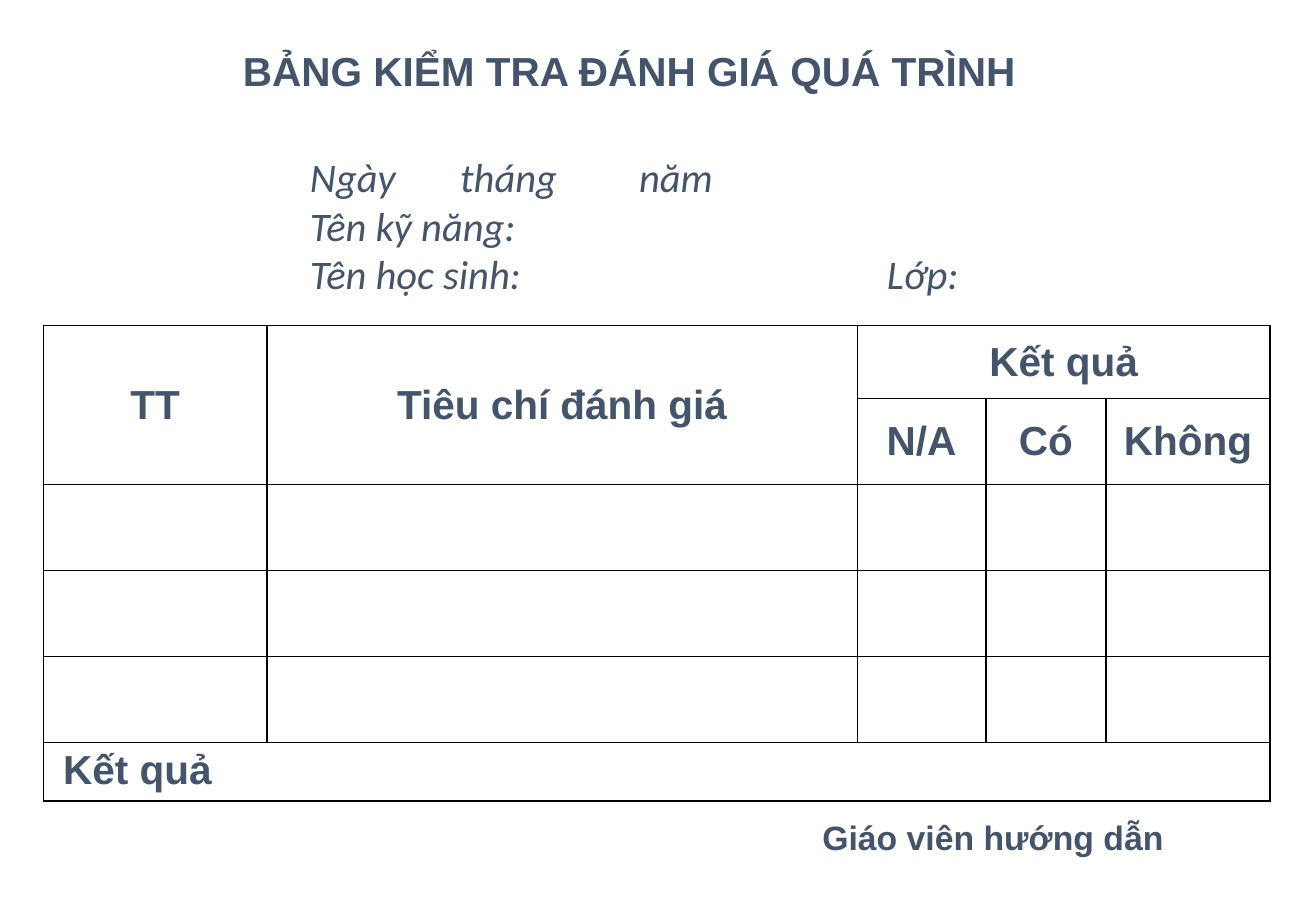
"""Build a one-slide process assessment form with a results table."""
from lxml.etree import SubElement
from pptx import Presentation
from pptx.dml.color import RGBColor
from pptx.enum.text import MSO_ANCHOR as Anchor, PP_ALIGN as Align
from pptx.oxml.ns import qn
from pptx.util import Cm, Pt

SLATE = RGBColor(0x44, 0x54, 0x6A)
BLACK = RGBColor(0x00, 0x00, 0x00)

HEADING = {"name": "Arial", "size": Pt(24), "bold": True}
DETAIL = {"name": "Calibri", "size": Pt(24), "italic": True}
SIGNATURE = {"name": "Arial", "size": Pt(20), "bold": True}


def write(paragraph, text, look, align=Align.LEFT):
    paragraph.alignment = align
    run = paragraph.add_run()
    run.text = text
    for attribute, value in look.items():
        setattr(run.font, attribute, value)
    run.font.color.rgb = SLATE


def add_frame(left, top, width, height, wrap, anchor):
    box = slide.shapes.add_textbox(Cm(left), Cm(top), Cm(width), Cm(height))
    frame = box.text_frame
    frame.word_wrap = wrap
    frame.vertical_anchor = anchor
    return frame


prs = Presentation()
prs.slide_width, prs.slide_height = Cm(27.51), Cm(19.05)
slide = prs.slides.add_slide(prs.slide_layouts[6])

title = add_frame(4.83, 0.84, 16.81, 1.28, False, Anchor.TOP)
write(title.paragraphs[0], "BẢNG KIỂM TRA ĐÁNH GIÁ QUÁ TRÌNH", HEADING)

details = add_frame(6.23, 3.06, 16, 3.3, True, Anchor.MIDDLE)
detail_lines = [
    ("Ngày\ttháng\tnăm", [3.14, 6.88]),
    ("Tên kỹ năng:", []),
    ("Tên học sinh:\tLớp:", [12.06]),
]
for index, (text, stops) in enumerate(detail_lines):
    line = details.add_paragraph() if index else details.paragraphs[0]
    if stops:
        tab_list = SubElement(line._p.get_or_add_pPr(), qn("a:tabLst"))
        for stop in stops:
            SubElement(tab_list, qn("a:tab"), pos=str(Cm(stop)), algn="l")
    write(line, text, DETAIL)

column_widths = [4.67, 12.34, 2.69, 2.51, 3.43]
row_heights = [1.52] + [1.8] * 4 + [1.2]
criteria = slide.shapes.add_table(
    len(row_heights), len(column_widths), Cm(0.91), Cm(6.81),
    Cm(sum(column_widths)), Cm(sum(row_heights))).table
criteria.first_row = criteria.horz_banding = False
for column, width in zip(criteria.columns, column_widths):
    column.width = Cm(width)
for row, height in zip(criteria.rows, row_heights):
    row.height = Cm(height)

for cell in criteria.iter_cells():
    cell.margin_left = cell.margin_right = Cm(0.2)
    cell.margin_top = cell.margin_bottom = Cm(0.1)
    cell.vertical_anchor = Anchor.MIDDLE
    properties = cell._tc.get_or_add_tcPr()
    for side in ("lnL", "lnR", "lnT", "lnB"):
        border = SubElement(properties, qn(f"a:{side}"), w=str(Pt(1)))
        paint = SubElement(border, qn("a:solidFill"))
        SubElement(paint, qn("a:srgbClr"), val=str(BLACK))
    cell.fill.background()

for first, last in [((0, 0), (1, 0)), ((0, 1), (1, 1)),
                    ((0, 2), (0, 4)), ((5, 0), (5, 4))]:
    criteria.cell(*first).merge(criteria.cell(*last))

headers = {
    (0, 0): "TT", (0, 1): "Tiêu chí đánh giá", (0, 2): "Kết quả",
    (1, 2): "N/A", (1, 3): "Có", (1, 4): "Không",
}
for position, text in headers.items():
    header = criteria.cell(*position).text_frame.paragraphs[0]
    write(header, text, HEADING, Align.CENTER)

result = criteria.cell(5, 0)
result.margin_left = Cm(0.41)
result.vertical_anchor = Anchor.TOP
write(result.text_frame.paragraphs[0], "Kết quả", HEADING)

teacher = add_frame(16.94, 16.94, 9.4, 1.11, True, Anchor.MIDDLE)
write(teacher.paragraphs[0], "Giáo viên hướng dẫn", SIGNATURE, Align.JUSTIFY)

prs.save("out.pptx")
